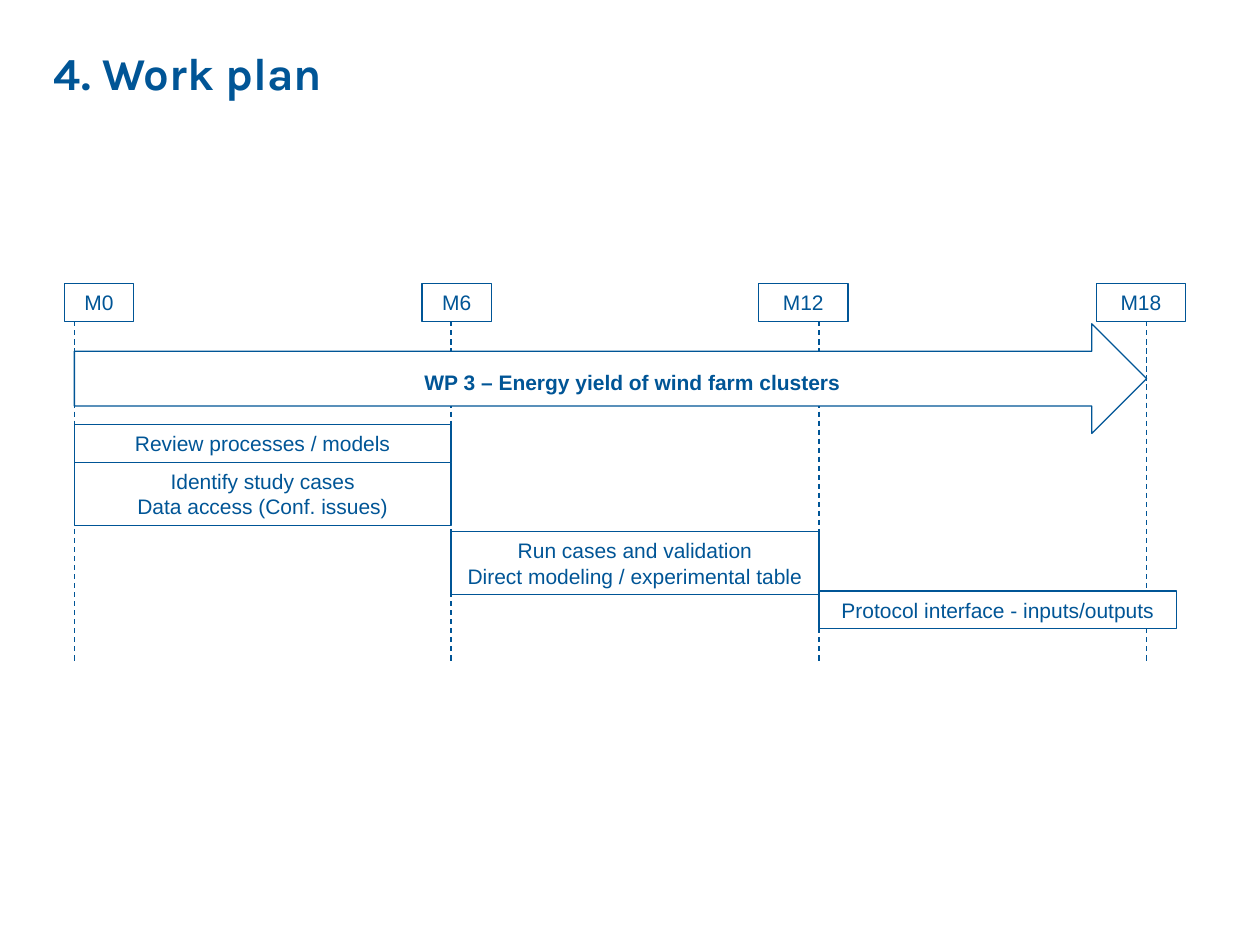
from collections import namedtuple
from dataclasses import dataclass

from lxml.etree import SubElement
from pptx import Presentation
from pptx.dml.color import RGBColor
from pptx.enum.dml import MSO_LINE_DASH_STYLE as DASH
from pptx.enum.shapes import MSO_CONNECTOR as CONN, MSO_SHAPE as SHAPE
from pptx.enum.text import MSO_ANCHOR as ANCHOR, PP_ALIGN as ALIGN
from pptx.oxml.ns import qn
from pptx.util import Inches, Pt


@dataclass(frozen=True)
class Theme:
    blue: RGBColor = RGBColor(0x00, 0x55, 0x96)
    white: RGBColor = RGBColor(0xFF, 0xFF, 0xFF)
    title_font: str = "Karla"
    body_font: str = "Arial"
    title_size: float = 26
    body_size: float = 12
    line_width: float = 0.75


THEME = Theme()
Box = namedtuple("Box", "x y w h")

prs = Presentation()
prs.slide_width, prs.slide_height = Inches(10), Inches(7.5)
UNIT = prs.slide_width / 100

MONTHS = [("M0", 0, -0.8, 5.5), ("M6", 29.9, -2.3, 5.5),
          ("M12", 59.1, -4.8, 7.1), ("M18", 85.1, -4, 7.1)]
TASKS = [
    (["Run cases and validation", "Direct modeling / experimental table"],
     Box(29.9, 19.7, 29.2, 5), None),
    (["Review processes / models"], Box(0, 11.2, 29.9, 3), None),
    (["Protocol interface - inputs/outputs"], Box(59.1, 24.4, 28.4, 3), THEME.white),
    (["Identify study cases", "Data access (Conf. issues)"],
     Box(0, 14.2, 29.9, 5), None),
]


def grid(*cells):
    return [round(c * UNIT) for c in cells]


def within(box, part):
    return Box(box.x + part.x, box.y + part.y, part.w, part.h)


def put_text(sp, lines, font=THEME.body_font, size=THEME.body_size, bold=False,
             align=ALIGN.CENTER, wrap=False):
    tf = sp.text_frame
    tf.word_wrap = wrap
    tf.vertical_anchor = ANCHOR.MIDDLE
    for i, line in enumerate(lines):
        p = tf.paragraphs[0] if i == 0 else tf.add_paragraph()
        p.alignment = align
        r = p.add_run()
        r.text = line
        r.font.name, r.font.size, r.font.bold = font, Pt(size), bold
        r.font.color.rgb = THEME.blue


def add_outline(s, box, kind=SHAPE.RECTANGLE, fill=None):
    sp = s.shapes.add_shape(kind, *grid(*box))
    sp.shadow.inherit = False
    if fill is None:
        sp.fill.background()
    else:
        sp.fill.solid()
        sp.fill.fore_color.rgb = fill
    sp.line.color.rgb = THEME.blue
    sp.line.width = Pt(THEME.line_width)
    return sp


def add_month_line(s, x, top, bottom):
    line = s.shapes.add_connector(CONN.STRAIGHT, *grid(x, top, x, bottom))
    line.line.color.rgb = THEME.blue
    line.line.width = Pt(THEME.line_width)
    line.line.dash_style = DASH.DASH
    SubElement(line._element.spPr, qn("a:effectLst"))


def add_title(s, box):
    sp = s.shapes.add_textbox(*grid(*box))
    put_text(sp, ["4. Work plan"], font=THEME.title_font, size=THEME.title_size,
             bold=True, align=ALIGN.LEFT, wrap=True)


def add_months(s, box):
    for name, col, shift, width in MONTHS:
        x = box.x + col
        add_month_line(s, x, box.y + 3, box.y + box.h)
        put_text(add_outline(s, Box(x + shift, box.y, width, 3)), [name])


def add_work_package(s, box):
    add_outline(s, box, SHAPE.RIGHT_ARROW, THEME.white)
    sp = s.shapes.add_textbox(*grid(*within(box, Box(20.9, 3.1, 46.8, 3))))
    put_text(sp, ["WP 3 – Energy yield of wind farm clusters"], bold=True, wrap=True)


def add_tasks(s, box):
    for lines, part, fill in TASKS:
        put_text(add_outline(s, within(box, part), fill=fill), lines)


def add_work_plan(s, box):
    add_months(s, box)
    add_work_package(s, within(box, Box(0, 3.2, box.w, 8.7)))
    add_tasks(s, box)


def main():
    s = prs.slides.add_slide(prs.slide_layouts[6])
    add_title(s, Box(3.3, 2.5, 87.5, 6.5))
    add_work_plan(s, Box(5.9, 22.5, 85.1, 30))
    prs.save("out.pptx")


if __name__ == "__main__":
    main()
